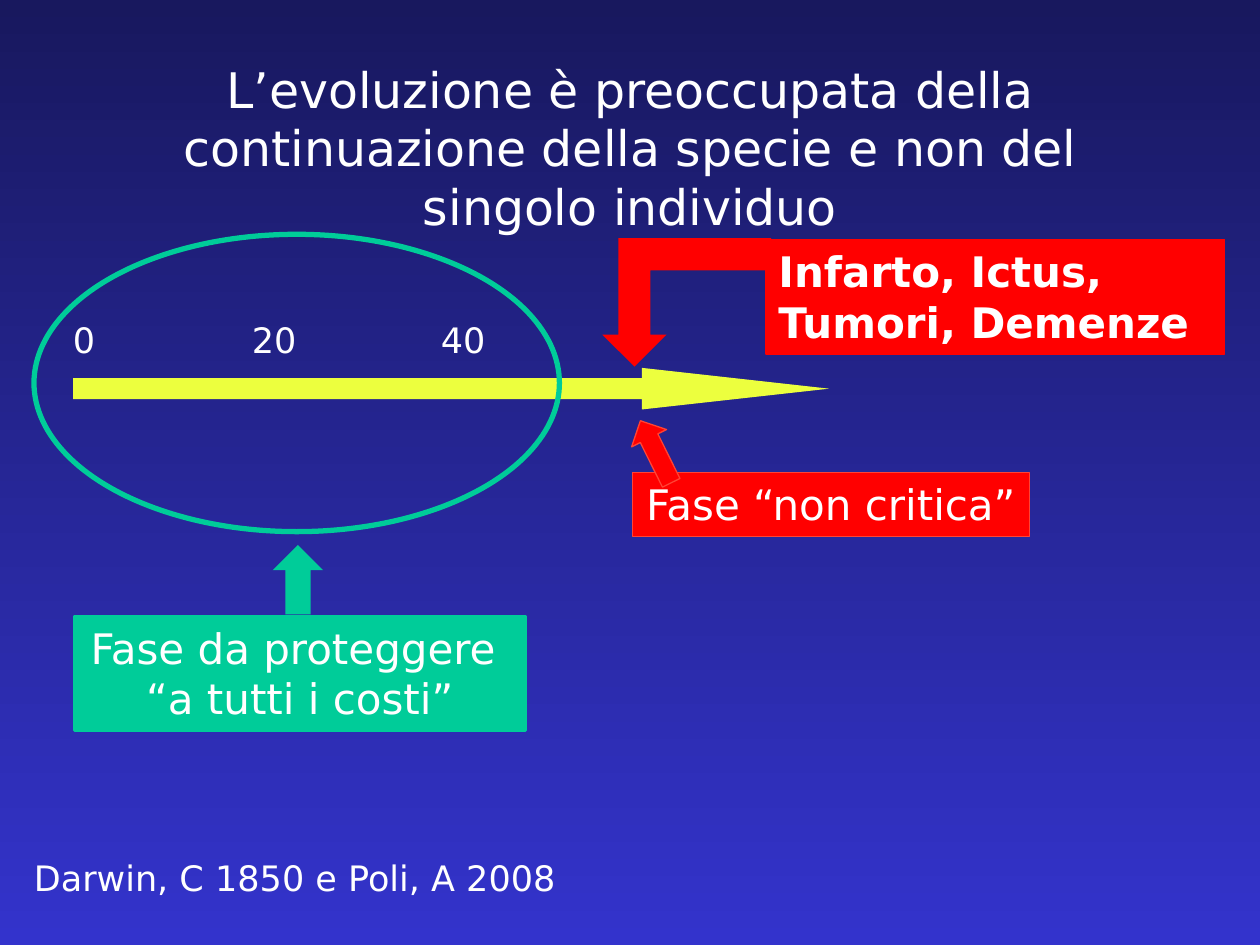
"""Build a slide on evolution and the phases of a lifetime."""
from pptx import Presentation
from pptx import util as u
from pptx.dml.color import RGBColor
from pptx.enum import shapes, text

COLUMNS, ROWS = 10, 7.5
CELL = u.Inches(1)
FONT = "DejaVu Sans"
WHITE, GREEN, RED, ORANGE, YELLOW = "FFFFFF", "00CC99", "FF0000", "FF4334", "ECFF3E"
SHAPE = shapes.MSO_SHAPE
LEFT, CENTER = text.PP_ALIGN.LEFT, text.PP_ALIGN.CENTER


def color(value):
    """Turn a hex string into a colour."""
    return RGBColor.from_string(value)


def cells(*lengths):
    """Turn grid lengths into slide units."""
    return [round(length * CELL) for length in lengths]


def write(box, *lines, size=24, bold=False, align=LEFT, wrap=True,
          anchor=text.MSO_ANCHOR.TOP, side=0.1):
    """Fill a box with one paragraph per line and format it."""
    frame = box.text_frame
    frame.auto_size = text.MSO_AUTO_SIZE.NONE
    frame.word_wrap = wrap
    frame.vertical_anchor = anchor
    frame.margin_left, frame.margin_right = cells(side, side)
    for index, line in enumerate(lines):
        para = frame.add_paragraph() if index else frame.paragraphs[0]
        para.alignment = align
        span = para.add_run()
        span.text = line
        span.font.name = FONT
        span.font.size = u.Pt(size)
        span.font.bold = bold
        span.font.color.rgb = color(WHITE)


def add_label(page, place, *lines, **style):
    """Add a plain text box."""
    box = page.shapes.add_textbox(*cells(*place))
    write(box, *lines, **style)
    return box


def add_figure(page, kind, place, fill=None, line=None, width=0.75, turn=0, adjust=()):
    """Add a preset shape with its fill, outline and rotation."""
    figure = page.shapes.add_shape(kind, *cells(*place))
    figure.shadow.inherit = False
    figure.rotation = turn
    for index, value in enumerate(adjust):
        figure.adjustments[index] = value
    if fill:
        figure.fill.solid()
        figure.fill.fore_color.rgb = color(fill)
    else:
        figure.fill.background()
    if line:
        figure.line.color.rgb = color(line)
        figure.line.width = u.Pt(width)
    else:
        figure.line.fill.background()
    return figure


def add_tabs(box, *stops):
    """Set left tab stops, in grid columns, on the first paragraph."""
    properties = box.text_frame.paragraphs[0]._p.get_or_add_pPr()
    tabs = properties.makeelement(properties.tag.replace("pPr", "tabLst"), {})
    properties.append(tabs)
    for stop in cells(*stops):
        tab = tabs.makeelement(tabs.tag.replace("tabLst", "tab"),
                               {"pos": str(stop), "algn": "l"})
        tabs.append(tab)


def paint_background(page, top, bottom):
    """Fill the page with a vertical gradient."""
    fill = page.background.fill
    fill.gradient()
    fill.gradient_angle = 270
    for stop, value, position in zip(fill.gradient_stops, (top, bottom), (0, 1)):
        stop.color.rgb = color(value)
        stop.position = position


def add_title(page, place, words):
    """Place and fill the title placeholder."""
    title = page.shapes.title
    title.left, title.top, title.width, title.height = cells(*place)
    write(title, words, size=28, align=CENTER, anchor=text.MSO_ANCHOR.BOTTOM, side=0)


def main():
    """Build and save the slide."""
    deck = Presentation()
    deck.slide_width, deck.slide_height = cells(COLUMNS, ROWS)
    page = deck.slides.add_slide(deck.slide_layouts[5])
    paint_background(page, "18185E", "3333CC")
    add_title(page, (0.75, 0.67, 8.5, 1.25),
              "L’evoluzione è preoccupata della continuazione della specie "
              "e non del singolo individuo")
    add_label(page, (0.17, 6.75, 4.42, 0.44), "Darwin, C 1850 e Poli, A 2008",
              size=20, wrap=False)

    add_figure(page, SHAPE.RIGHT_ARROW, (0.58, 2.92, 6, 0.33), YELLOW, adjust=(0.5, 4.5))
    ages = add_label(page, (0.48, 2.48, 3.77, 0.44), "0\t20\t40", size=20)
    add_tabs(ages, 1.42, 2.92)
    add_figure(page, SHAPE.OVAL, (0.27, 1.86, 4.17, 2.36), line=GREEN, width=3)

    protected = add_figure(page, SHAPE.RECTANGLE, (0.59, 4.89, 3.58, 0.91),
                           GREEN, GREEN, width=1.5)
    write(protected, "Fase da proteggere ", "“a tutti i costi”", align=CENTER, wrap=False)
    uncritical = add_figure(page, SHAPE.RECTANGLE, (5.02, 3.75, 3.15, 0.51), RED, ORANGE)
    write(uncritical, "Fase “non critica”", align=CENTER, wrap=False)
    add_figure(page, SHAPE.RIGHT_ARROW, (4.93, 3.43, 0.55, 0.31), RED, ORANGE,
               turn=243.6, adjust=(0.5, 0.5))
    add_figure(page, SHAPE.RIGHT_ARROW, (2.09, 4.4, 0.55, 0.4), GREEN,
               turn=270, adjust=(0.5, 0.5))

    diseases = add_figure(page, SHAPE.RECTANGLE, (6.08, 1.9, 3.64, 0.91), RED, RED)
    write(diseases, "Infarto, Ictus,", "Tumori, Demenze", bold=True)
    add_figure(page, SHAPE.BENT_UP_ARROW, (4.78, 1.89, 1.34, 1.02), RED, turn=180)
    deck.save("out.pptx")


if __name__ == "__main__":
    main()
